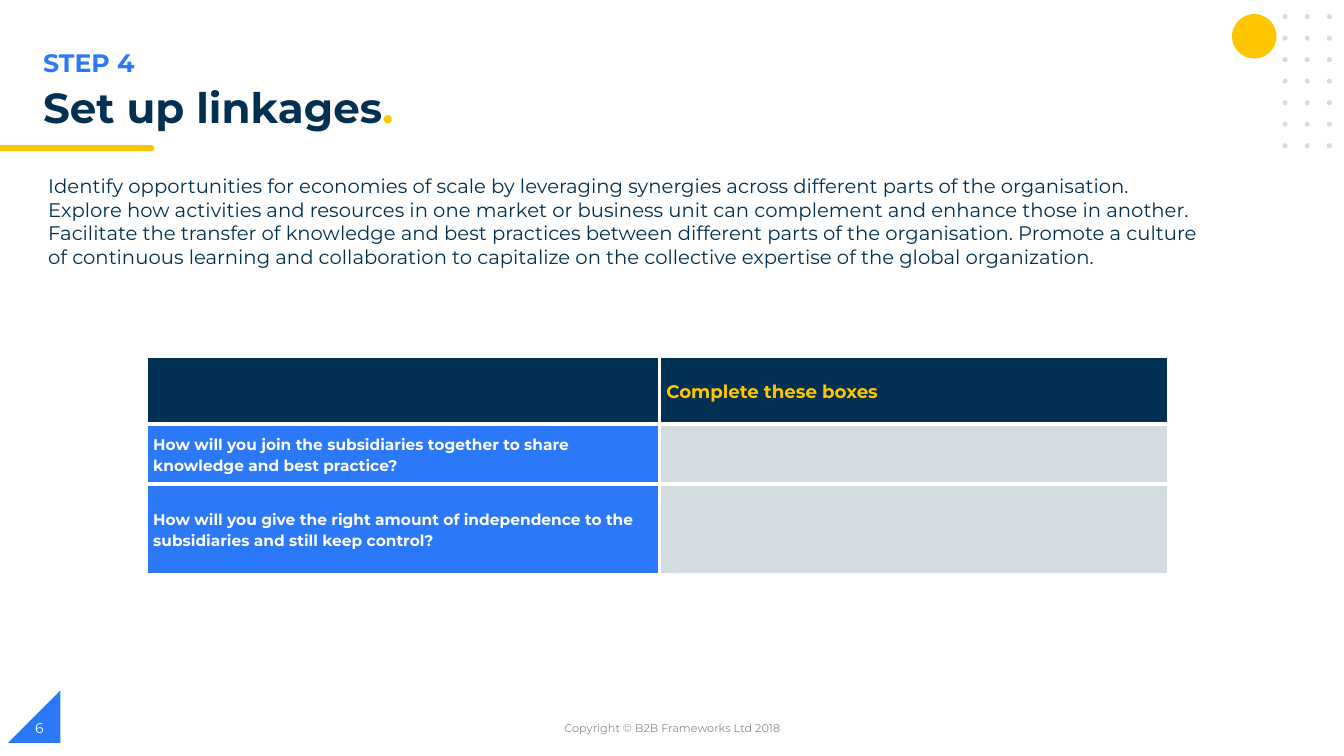
from lxml import etree
from pptx import Presentation
from pptx.dml.color import RGBColor
from pptx.enum.shapes import MSO_SHAPE
from pptx.enum.text import MSO_ANCHOR, PP_ALIGN
from pptx.oxml.ns import qn
from pptx.util import Inches, Pt

NAVY = RGBColor(0x02, 0x30, 0x53)
BLUE = RGBColor(0x2B, 0x79, 0xF8)
GOLD = RGBColor(0xFF, 0xC6, 0x00)
PALE = RGBColor(0xD1, 0xDB, 0xE0)
GREY = RGBColor(0x88, 0x8C, 0x97)
WHITE = RGBColor(0xFF, 0xFF, 0xFF)

OVAL = MSO_SHAPE.OVAL
RECT = MSO_SHAPE.RECTANGLE
CAP = MSO_SHAPE.FLOWCHART_TERMINATOR
CORNER = MSO_SHAPE.RIGHT_TRIANGLE
TOP, MIDDLE = MSO_ANCHOR.TOP, MSO_ANCHOR.MIDDLE
LEFT, CENTER = PP_ALIGN.LEFT, PP_ALIGN.CENTER

FONT = "Montserrat"
INTRO = (
    "Identify opportunities for economies of scale by leveraging synergies "
    "across different parts of the organisation. Explore how activities and "
    "resources in one market or business unit can complement and enhance "
    "those in another. Facilitate the transfer of knowledge and best "
    "practices between different parts of the organisation. Promote a "
    "culture of continuous learning and collaboration to capitalize on the "
    "collective expertise of the global organization."
)
ROWS = [
    ("", "Complete these boxes"),
    ("How will you join the subsidiaries together to share knowledge and "
     "best practice?", ""),
    ("How will you give the right amount of independence to the "
     "subsidiaries and still keep control?", ""),
]
WIDTHS = [5.09, 5.05]
HEIGHTS = [0.68, 0.59, 0.9]


def style(para, size, color, bold=False):
    font = para.font
    font.name, font.size, font.bold = FONT, Pt(size), bold
    font.color.rgb = color


def add_shape(slide, kind, box, color):
    shape = slide.shapes.add_shape(kind, *map(Inches, box))
    shape.shadow.inherit = False
    shape.fill.solid()
    shape.fill.fore_color.rgb = color
    shape.line.fill.background()
    return shape


def add_text(slide, box, text, size, color, bold=False, anchor=TOP, align=LEFT):
    frame = slide.shapes.add_textbox(*map(Inches, box)).text_frame
    frame.word_wrap = True
    frame.vertical_anchor = anchor
    para = frame.paragraphs[0]
    para.add_run().text = text
    para.alignment = align
    style(para, size, color, bold)
    return para


def add_header(slide, left, top, width):
    add_text(slide, (left, top, width, 0.4), "STEP 4", 18, BLUE, True)
    title = add_text(slide, (left, top + 0.4, width, 0.56),
                     "Set up linkages", 30, NAVY, True)
    title.line_spacing = 0.9
    stop = title.add_run()
    stop.text = "."
    stop.font.color.rgb = GOLD
    # Underline from the slide edge, with a rounded end
    line = top + 1.02
    add_shape(slide, CAP, (1.34, line, 0.19, 0.06), GOLD)
    add_shape(slide, RECT, (0, line, 1.41, 0.06), GOLD)


def add_dots(slide, left, top):
    add_shape(slide, OVAL, (left, top, 0.44, 0.44), GOLD)
    for row in range(7):
        for col in range(3):
            box = (left + 0.5 + col * 0.22, top + row * 0.2135, 0.05, 0.05)
            add_shape(slide, OVAL, box, PALE)


def add_border(cell):
    props = cell._tc.get_or_add_tcPr()
    for index, side in enumerate(("a:lnL", "a:lnR", "a:lnT", "a:lnB")):
        line = etree.Element(qn(side), w=str(Pt(3)))
        fill = etree.SubElement(line, qn("a:solidFill"))
        etree.SubElement(fill, qn("a:srgbClr"), val=str(WHITE))
        props.insert(index, line)


def add_grid(slide, left, top):
    box = (left, top, sum(WIDTHS), sum(HEIGHTS))
    table = slide.shapes.add_table(
        len(ROWS), len(WIDTHS), *map(Inches, box)).table
    for column, width in zip(table.columns, WIDTHS):
        column.width = Inches(width)
    for r, texts in enumerate(ROWS):
        table.rows[r].height = Inches(HEIGHTS[r])
        for c, text in enumerate(texts):
            cell = table.cell(r, c)
            cell.fill.solid()
            cell.fill.fore_color.rgb = NAVY if r == 0 else (BLUE, PALE)[c]
            add_border(cell)
            cell.vertical_anchor = MIDDLE
            cell.margin_left = cell.margin_right = Inches(0.07)
            cell.margin_top = cell.margin_bottom = 0
            cell.text = text
            para = cell.text_frame.paragraphs[0]
            para.line_spacing = 1.15
            size, color = (13, GOLD) if r == 0 else (11, WHITE)
            style(para, size, color, True)


def add_footer(slide, top):
    corner = add_shape(slide, CORNER, (0.08, top - 0.17, 0.52, 0.52), BLUE)
    corner._element.spPr.get_or_add_xfrm().set("flipH", "1")
    add_text(slide, (4.42, top, 4.5, 0.4), "Copyright © B2B Frameworks Ltd 2018",
             8, GREY, anchor=MIDDLE, align=CENTER)
    add_text(slide, (0.25, top, 3, 0.4), "6", 10, WHITE, anchor=MIDDLE)


def main():
    deck = Presentation()
    deck.slide_width, deck.slide_height = Inches(13.33), Inches(7.5)
    slide = deck.slides.add_slide(deck.slide_layouts[6])
    add_header(slide, 0.33, 0.42, 12.08)
    add_dots(slide, 12.22, 0.14)
    add_text(slide, (0.38, 1.68, 11.64, 1.04), INTRO, 14, NAVY)
    add_grid(slide, 1.45, 3.53)
    add_footer(slide, 7.02)
    deck.save("out.pptx")


if __name__ == "__main__":
    main()
